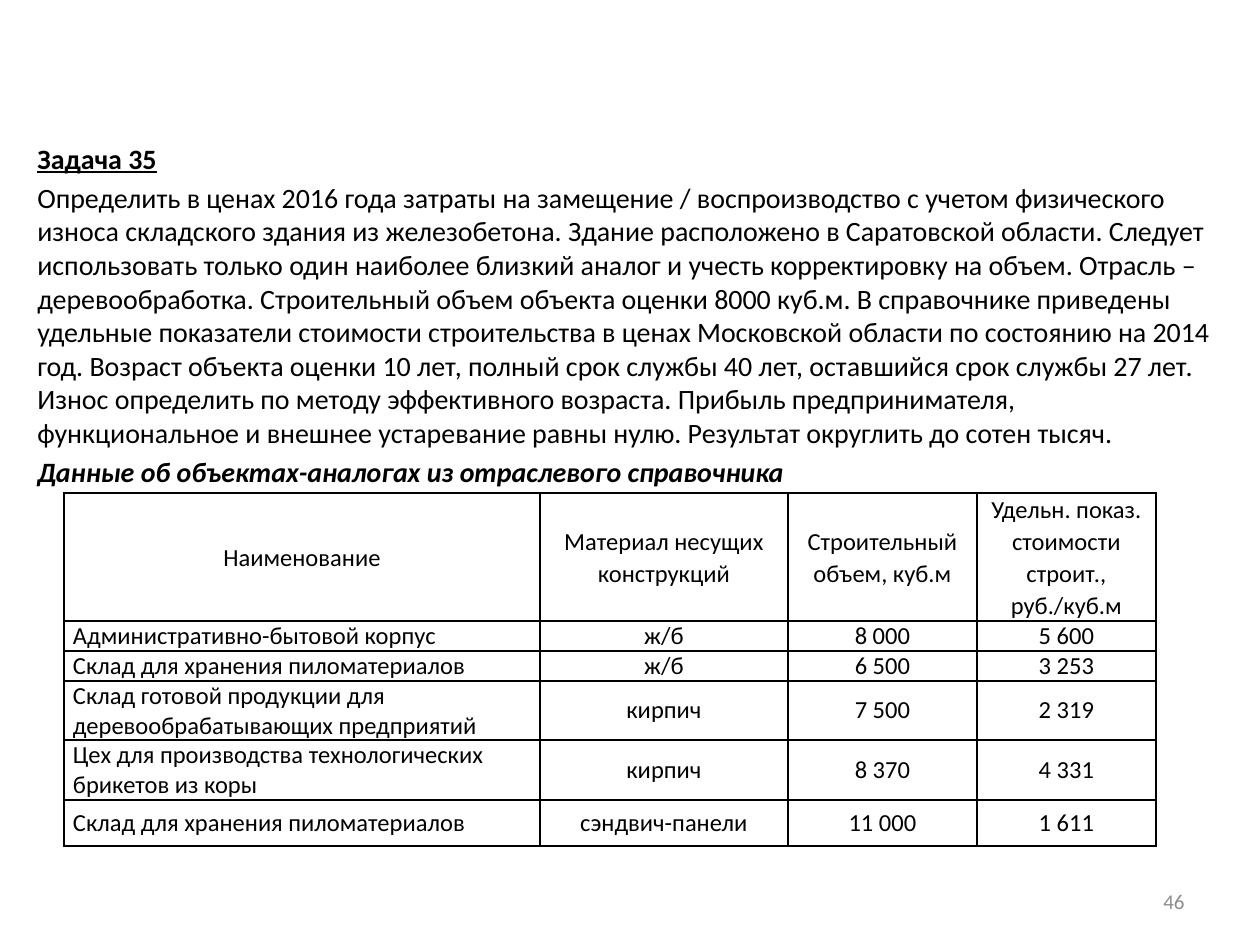
"""Builds the slide with valuation task 35 and its table of comparable buildings."""
from dataclasses import dataclass

from lxml import etree
from pptx import Presentation
from pptx.dml.color import RGBColor
from pptx.enum.text import MSO_ANCHOR, PP_ALIGN
from pptx.oxml.ns import qn
from pptx.util import Pt

LEFT, CENTER, RIGHT = PP_ALIGN.LEFT, PP_ALIGN.CENTER, PP_ALIGN.RIGHT
TOP, MIDDLE = MSO_ANCHOR.TOP, MSO_ANCHOR.MIDDLE
EMU_PER_PX = 914400 // 126


@dataclass(frozen=True)
class Theme:
    font: str = "Calibri"
    ink: str = "000000"
    muted: str = "8C8C8C"
    body: int = 16
    table: int = 14
    footer: int = 12
    border: int = 1


THEME = Theme()

HEADING = "Задача 35"
TASK = (
    "Определить в ценах 2016 года затраты на замещение / воспроизводство с учетом "
    "физического износа складского здания из железобетона. Здание расположено в "
    "Саратовской области. Следует использовать только один наиболее близкий аналог "
    "и учесть корректировку на объем. Отрасль – деревообработка. Строительный объем "
    "объекта оценки 8000 куб.м. В справочнике приведены удельные показатели стоимости "
    "строительства в ценах Московской области по состоянию на 2014 год. Возраст объекта "
    "оценки 10 лет, полный срок службы 40 лет, оставшийся срок службы 27 лет. Износ "
    "определить по методу эффективного возраста. Прибыль предпринимателя, "
    "функциональное и внешнее устаревание равны нулю. Результат округлить до сотен тысяч."
)
TABLE_TITLE = "Данные об объектах-аналогах из отраслевого справочника"
PAGE_NUMBER = "46"

ROWS = [
    ("Наименование", "Материал несущих конструкций", "Строительный объем, куб.м",
     "Удельн. показ. стоимости строит., руб./куб.м"),
    ("Административно-бытовой корпус", "ж/б", "8 000", "5 600"),
    ("Склад для хранения пиломатериалов", "ж/б", "6 500", "3 253"),
    ("Склад готовой продукции для деревообрабатывающих предприятий", "кирпич",
     "7 500", "2 319"),
    ("Цех для производства технологических брикетов из коры", "кирпич",
     "8 370", "4 331"),
    ("Склад для хранения пиломатериалов", "сэндвич-панели", "11 000", "1 611"),
]
COLUMN_WIDTHS = [476, 248, 189, 179]
ROW_HEIGHTS = [128, 30, 30, 59, 60, 46]


def px(value):
    return value * EMU_PER_PX


def write(paragraph, text, size=THEME.body, color=THEME.ink, bold=False, italic=False,
          underline=False, align=LEFT, before=0, spacing=1.0):
    paragraph.alignment = align
    paragraph.space_before = Pt(before)
    paragraph.line_spacing = spacing
    run = paragraph.add_run()
    run.text = text
    font = run.font
    font.name, font.size = THEME.font, Pt(size)
    font.bold, font.italic, font.underline = bold, italic, underline
    font.color.rgb = RGBColor.from_string(color)


def add_box(slide, left, top, width, height, anchor=TOP):
    frame = slide.shapes.add_textbox(px(left), px(top), px(width), px(height)).text_frame
    frame.word_wrap = True
    frame.vertical_anchor = anchor
    return frame


def add_borders(cell):
    properties = cell._tc.get_or_add_tcPr()
    for side in ("a:lnL", "a:lnR", "a:lnT", "a:lnB"):
        line = etree.SubElement(properties, qn(side), w=str(Pt(THEME.border)))
        fill = etree.SubElement(line, qn("a:solidFill"))
        etree.SubElement(fill, qn("a:srgbClr"), val=THEME.ink)


def add_analogues(slide, left, top):
    table = slide.shapes.add_table(
        len(ROWS), len(COLUMN_WIDTHS), px(left), px(top),
        px(sum(COLUMN_WIDTHS)), px(sum(ROW_HEIGHTS))).table
    table.first_row = table.horz_banding = False
    for column, width in zip(table.columns, COLUMN_WIDTHS):
        column.width = px(width)
    for row_index, values in enumerate(ROWS):
        table.rows[row_index].height = px(ROW_HEIGHTS[row_index])
        is_header = row_index == 0
        for column_index, value in enumerate(values):
            cell = table.cell(row_index, column_index)
            cell.margin_left = cell.margin_right = px(9)
            cell.margin_top = cell.margin_bottom = 0
            cell.vertical_anchor = MIDDLE
            add_borders(cell)
            cell.fill.background()
            write(cell.text_frame.paragraphs[0], value, size=THEME.table,
                  align=CENTER if is_header or column_index else LEFT,
                  spacing=1.07 if is_header else 1.0)


def main():
    presentation = Presentation()
    presentation.slide_width, presentation.slide_height = px(1260), px(945)
    slide = presentation.slides.add_slide(presentation.slide_layouts[6])

    body = add_box(slide, 25, 135, 1201, 735)
    write(body.paragraphs[0], HEADING, bold=True, underline=True)
    write(body.add_paragraph(), TASK, before=3.2)
    write(body.add_paragraph(), TABLE_TITLE, bold=True, italic=True, before=3.2)

    add_analogues(slide, 64, 493)

    footer = add_box(slide, 903, 876, 294, 50, anchor=MIDDLE)
    write(footer.paragraphs[0], PAGE_NUMBER, size=THEME.footer, color=THEME.muted,
          align=RIGHT)

    presentation.save("out.pptx")


if __name__ == "__main__":
    main()
